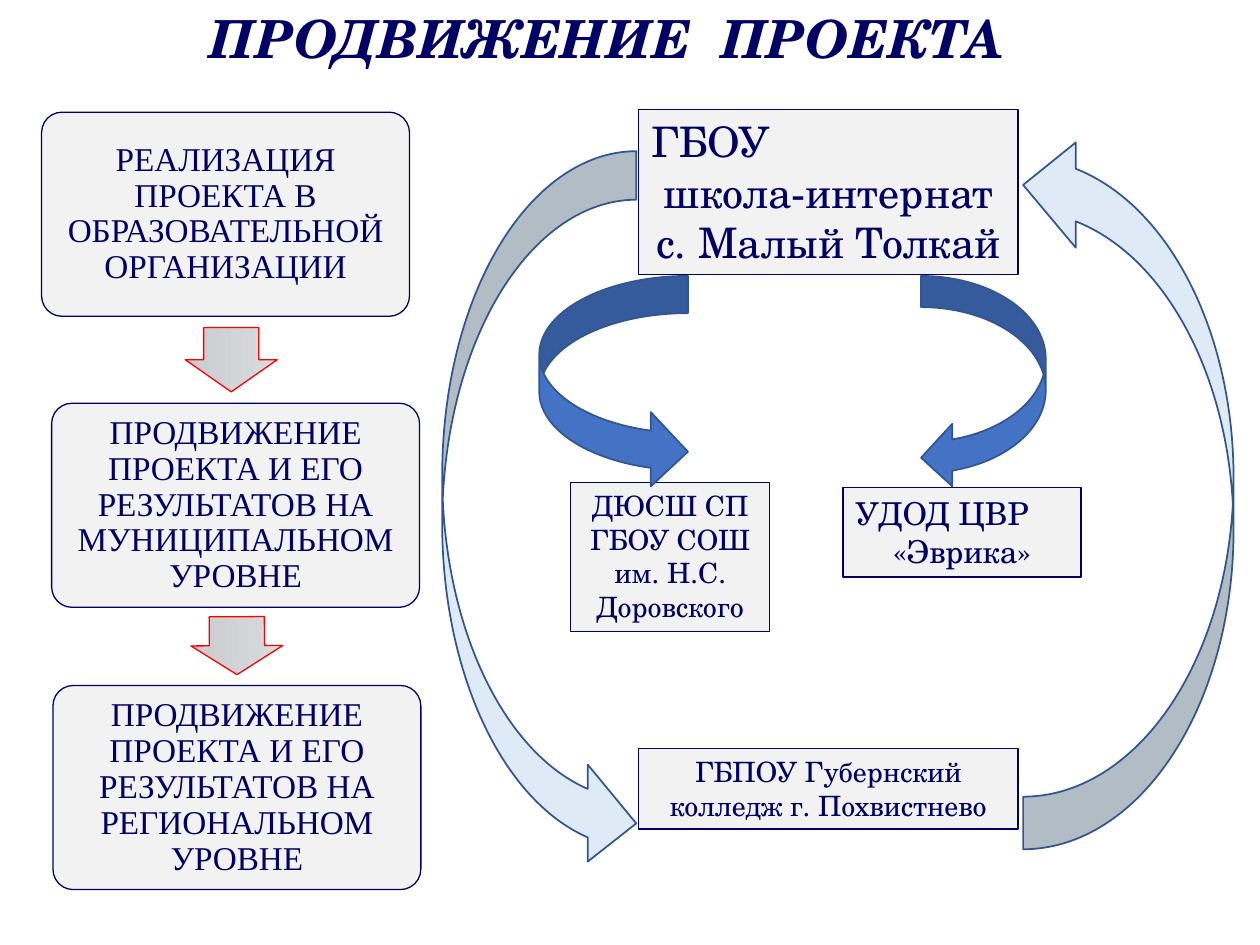
"""Build the project promotion slide: three steps beside a ring of partner organisations."""
from dataclasses import dataclass
from typing import Any

from pptx import Presentation
from pptx.dml.color import RGBColor as Rgb
from pptx.enum.shapes import MSO_SHAPE as Shape
from pptx.enum.text import MSO_ANCHOR as Anchor, PP_ALIGN as Align
from pptx.util import Inches, Pt

COLUMNS, ROWS = 100, 75


@dataclass(frozen=True)
class Theme:
    ink: str = "000066"
    panel: str = "F2F2F2"
    ring: str = "DEEBF7"
    branch: str = "4472C4"
    arrow_edge: str = "325491"
    step_edge: str = "FF0000"
    step_shades: tuple[str, str] = ("D9DBDE", "C9CCD0")
    serif: str = "Times New Roman"
    school: str = "TeX Gyre Schola"
    title_size: float = 30
    step_size: float = 19


@dataclass(frozen=True)
class Area:
    column: float
    row: float
    columns: float
    rows: float


@dataclass(frozen=True)
class Organisation:
    area: Area
    size: float
    lines: tuple[str, ...]
    first_align: Any = Align.CENTER


@dataclass(frozen=True)
class Arrow:
    area: Area
    preset: Any
    fill: str
    rotation: float = 0


THEME = Theme()
STEP_WIDTH, STEP_HEIGHT = 29.2, 16.2

STEPS = (
    (3.3, 8.9, "РЕАЛИЗАЦИЯ ПРОЕКТА В ОБРАЗОВАТЕЛЬНОЙ ОРГАНИЗАЦИИ"),
    (4.1, 32, "ПРОДВИЖЕНИЕ ПРОЕКТА И ЕГО РЕЗУЛЬТАТОВ НА МУНИЦИПАЛЬНОМ УРОВНЕ"),
    (4.2, 54.4, "ПРОДВИЖЕНИЕ ПРОЕКТА И ЕГО РЕЗУЛЬТАТОВ НА РЕГИОНАЛЬНОМ УРОВНЕ"),
)
STEP_ARROWS = (
    Arrow(Area(15.8, 24.9, 5.1, 7.3), Shape.RIGHT_ARROW, "", 90),
    Arrow(Area(16.5, 47.6, 4.6, 7.3), Shape.RIGHT_ARROW, "", 89.7),
)
ORGANISATIONS = (
    Organisation(Area(45.3, 38.3, 15.8, 11.8), 16, ("ДЮСШ СП ГБОУ СОШ им. Н.С. Доровского",)),
    Organisation(Area(66.9, 38.7, 18.9, 7.1), 18, ("УДОД ЦВР", "«Эврика»"), Align.LEFT),
    Organisation(Area(50.7, 59.4, 30.1, 6.4), 16, ("ГБПОУ Губернский колледж г. Похвистнево",)),
    Organisation(Area(50.7, 8.7, 30.1, 13.1), 24,
                 ("ГБОУ", "школа-интернат", "с. Малый Толкай"), Align.LEFT),
)
CURVED_ARROWS = (
    Arrow(Area(81.2, 10.5, 16.7, 56.9), Shape.CURVED_RIGHT_ARROW, THEME.ring, 180),
    Arrow(Area(35.1, 12, 15.4, 57.2), Shape.CURVED_RIGHT_ARROW, THEME.ring),
    Arrow(Area(42.8, 21.9, 11.8, 16.9), Shape.CURVED_RIGHT_ARROW, THEME.branch),
    Arrow(Area(73.1, 21.9, 9.9, 16.9), Shape.CURVED_LEFT_ARROW, THEME.branch),
)


def apply(target: Any, values: dict[str, Any]) -> None:
    """Set every named attribute on the target."""
    for name, value in values.items():
        setattr(target, name, value)


def place(deck: Any, area: Area) -> tuple[int, int, int, int]:
    """Turn grid columns and rows into slide lengths."""
    column, row = deck.slide_width / COLUMNS, deck.slide_height / ROWS
    return (round(area.column * column), round(area.row * row),
            round(area.columns * column), round(area.rows * row))


def draw_shape(deck: Any, slide: Any, preset: Any, area: Area,
               fill: str, edge: str, width: float) -> Any:
    """Add a flat outlined shape, filled when a colour is given."""
    figure = slide.shapes.add_shape(preset, *place(deck, area))
    figure.shadow.inherit = False
    if fill:
        figure.fill.solid()
        figure.fill.fore_color.rgb = Rgb.from_string(fill)
    figure.line.color.rgb = Rgb.from_string(edge)
    figure.line.width = Pt(width)
    return figure


def write(frame: Any, lines: tuple[str, ...], font: dict[str, Any],
          layout: dict[str, Any], first_align: Any = Align.CENTER) -> None:
    """Write one paragraph per line in a single type style."""
    apply(frame, {"word_wrap": True, "vertical_anchor": Anchor.TOP} | layout)
    for index, line in enumerate(lines):
        paragraph = frame.paragraphs[0] if index == 0 else frame.add_paragraph()
        paragraph.alignment = Align.CENTER if index else first_align
        run = paragraph.add_run()
        run.text = line
        apply(run.font, font)
        run.font.color.rgb = Rgb.from_string(THEME.ink)


def draw_title(deck: Any, slide: Any) -> None:
    """Add the slide heading."""
    heading = slide.shapes.add_textbox(*place(deck, Area(8.3, 0, 79.7, 6.1)))
    write(heading.text_frame, ("ПРОДВИЖЕНИЕ  ПРОЕКТА",),
          {"size": Pt(THEME.title_size), "name": THEME.school, "bold": True, "italic": True}, {})


def draw_step(deck: Any, slide: Any, column: float, row: float, wording: str) -> None:
    """Add one rounded step of the process."""
    step = draw_shape(deck, slide, Shape.ROUNDED_RECTANGLE,
                      Area(column, row, STEP_WIDTH, STEP_HEIGHT), THEME.panel, THEME.ink, 0.75)
    step.adjustments[0] = 0.1
    sides = ("margin_left", "margin_top", "margin_right", "margin_bottom")
    write(step.text_frame, (wording,), {"size": Pt(THEME.step_size), "name": THEME.serif},
          {"vertical_anchor": Anchor.MIDDLE} | dict.fromkeys(sides, Inches(0.08)))
    step.text_frame.paragraphs[0].line_spacing = 0.9


def draw_step_arrow(deck: Any, slide: Any, arrow: Arrow) -> None:
    """Add a shaded arrow leading to the next step."""
    pointer = draw_shape(deck, slide, arrow.preset, arrow.area, arrow.fill, THEME.step_edge, 0.75)
    pointer.rotation = arrow.rotation
    pointer.adjustments[0] = 0.6
    pointer.fill.gradient()
    pointer.fill.gradient_angle = 270
    for stop, shade in zip(pointer.fill.gradient_stops, THEME.step_shades):
        stop.color.rgb = Rgb.from_string(shade)


def draw_organisation(deck: Any, slide: Any, organisation: Organisation) -> None:
    """Add the box of one partner organisation."""
    box = draw_shape(deck, slide, Shape.RECTANGLE, organisation.area, THEME.panel, THEME.ink, 0.75)
    write(box.text_frame, organisation.lines,
          {"size": Pt(organisation.size), "name": THEME.school}, {}, organisation.first_align)


def draw_curved_arrow(deck: Any, slide: Any, arrow: Arrow) -> None:
    """Add a curved arrow between organisations."""
    bend = draw_shape(deck, slide, arrow.preset, arrow.area, arrow.fill, THEME.arrow_edge, 1)
    bend.rotation = arrow.rotation


def main() -> None:
    """Build and save the slide."""
    deck = Presentation()
    apply(deck, {"slide_width": Inches(10), "slide_height": Inches(7.5)})
    slide = deck.slides.add_slide(deck.slide_layouts[6])
    draw_title(deck, slide)
    for step in STEPS:
        draw_step(deck, slide, *step)
    for arrow in STEP_ARROWS:
        draw_step_arrow(deck, slide, arrow)
    for organisation in ORGANISATIONS:
        draw_organisation(deck, slide, organisation)
    for arrow in CURVED_ARROWS:
        draw_curved_arrow(deck, slide, arrow)
    deck.save("out.pptx")


if __name__ == "__main__":
    main()
